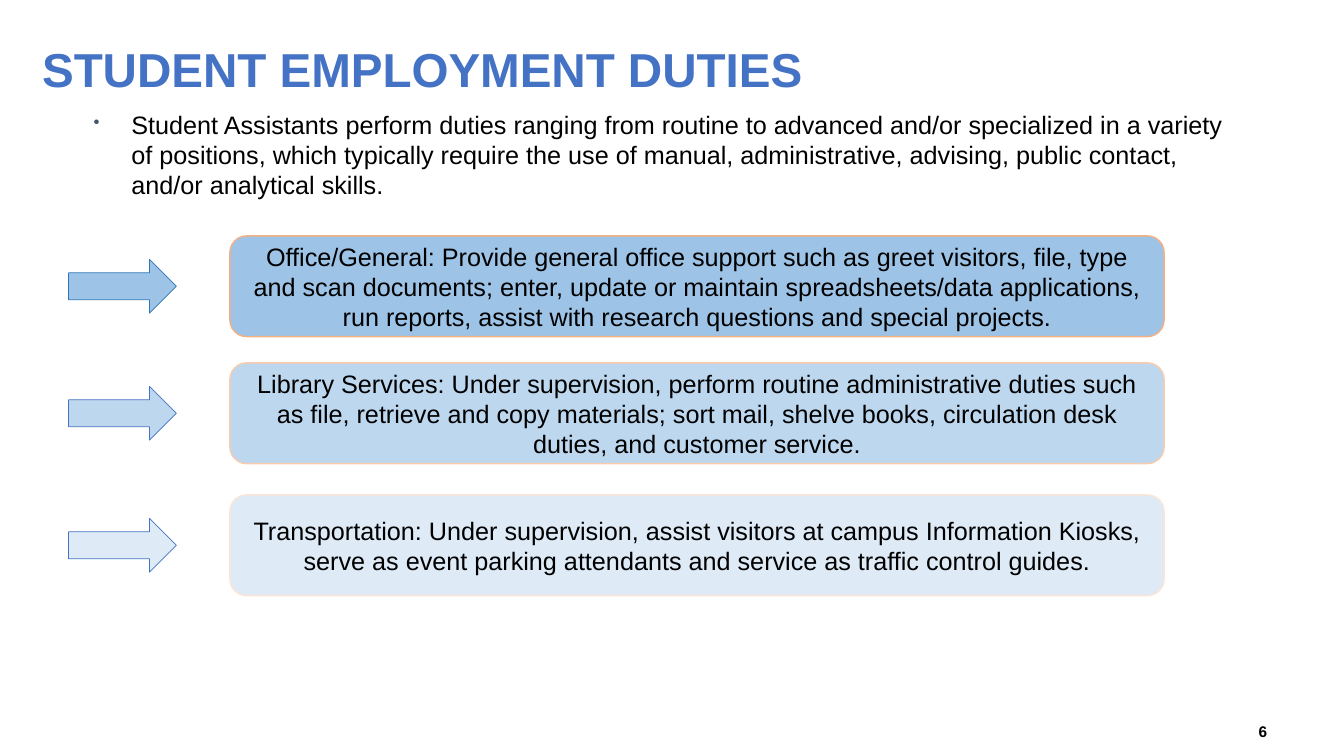
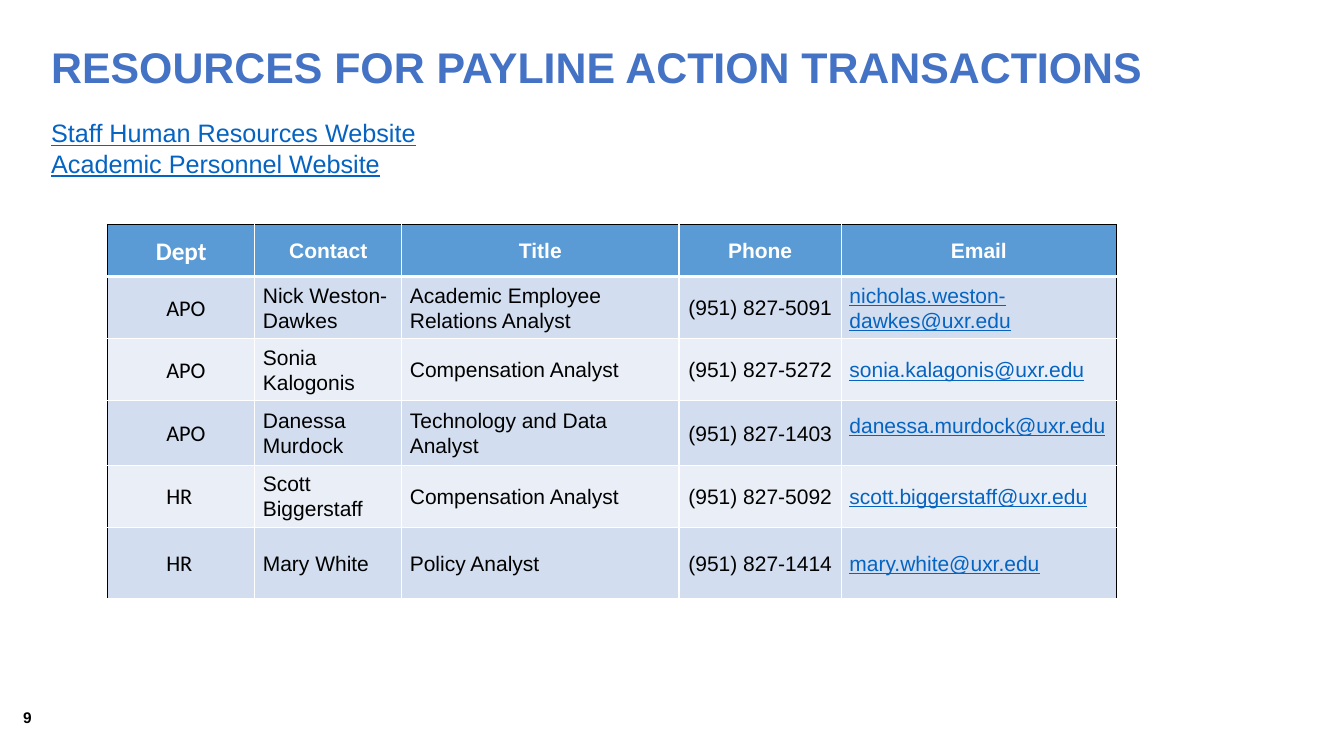
from lxml import etree
from pptx import Presentation
from pptx.dml.color import RGBColor
from pptx.enum.shapes import MSO_SHAPE
from pptx.enum.text import MSO_ANCHOR, PP_ALIGN
from pptx.oxml.ns import qn
from pptx.util import Pt

ARROW, ROUND = MSO_SHAPE.RIGHT_ARROW, MSO_SHAPE.ROUNDED_RECTANGLE
TOP, MID = MSO_ANCHOR.TOP, MSO_ANCHOR.MIDDLE
LEFT, CENTER, RIGHT = PP_ALIGN.LEFT, PP_ALIGN.CENTER, PP_ALIGN.RIGHT

COLORS = {
    "title": "4472C4", "ink": "000000", "white": "FFFFFF", "link": "0563C1",
    "bullet": "44546A", "head": "5B9BD5", "odd": "D2DEEF", "even": "EAEFF7",
    "deep": "9DC3E6", "soft": "BDD7EE", "pale": "DEEBF7", "navy": "2E75B6",
    "rust": "F4B183", "peach": "F8CBAD", "cream": "FBE5D6",
}


def color(name):
    return RGBColor.from_string(COLORS[name])


def write(frame, text, size=18, ink="ink", font="Arial", bold=False, under=False,
          align=LEFT, anchor=TOP, space=None, before=None, indent=0):
    """Fill a text frame, with one paragraph for each line of text."""
    frame.word_wrap = True
    frame.vertical_anchor = anchor
    frame.text = text
    for para in frame.paragraphs:
        para.alignment = align
        if space:
            para.line_spacing = space
        if before:
            para.space_before = Pt(before)
        if indent:
            para._p.get_or_add_pPr().set("marL", str(Pt(indent)))
        for run in para.runs:
            face = run.font
            face.name, face.size = font, Pt(size)
            face.bold, face.underline = bold, under
            face.color.rgb = color(ink)


def dot(para, ink, hang, scale):
    """Give a paragraph a hanging bullet, scaled in percent of the text."""
    props = para._p.get_or_add_pPr()
    props.set("marL", str(Pt(hang)))
    props.set("indent", str(-Pt(hang)))
    tint = etree.SubElement(props, qn("a:buClr"))
    etree.SubElement(tint, qn("a:srgbClr"), val=COLORS[ink])
    etree.SubElement(props, qn("a:buSzPct"), val=str(scale * 1000))
    etree.SubElement(props, qn("a:buChar"), char="•")


def edge(cell, side, ink, width=1):
    """Draw one border of a cell; side is L, R, T or B."""
    line = etree.SubElement(cell._tc.get_or_add_tcPr(), qn("a:ln" + side),
                            w=str(Pt(width)))
    fill = etree.SubElement(line, qn("a:solidFill"))
    etree.SubElement(fill, qn("a:srgbClr"), val=COLORS[ink])


class Deck:
    def __init__(self):
        self.file = Presentation()
        self.file.slide_width, self.file.slide_height = Pt(960), Pt(540)

    def start(self):
        self.slide = self.file.slides.add_slide(self.file.slide_layouts[6])

    def text(self, box, text, **style):
        frame = self.slide.shapes.add_textbox(*map(Pt, box)).text_frame
        write(frame, text, **style)
        return frame

    def title(self, box, text, size):
        self.text(box, text, size=size, ink="title", bold=True, anchor=MID, space=0.9)

    def number(self, left, top, text, align):
        self.text((left, top, 224, 24), text, size=11, bold=True,
                  align=align, anchor=MID)

    def shape(self, kind, box, fill, line, width, text=""):
        shape = self.slide.shapes.add_shape(kind, *map(Pt, box))
        shape.shadow.inherit = False
        shape.fill.solid()
        shape.fill.fore_color.rgb = color(fill)
        shape.line.color.rgb = color(line)
        shape.line.width = Pt(width)
        if text:
            write(shape.text_frame, text, align=CENTER, anchor=MID)

    def table(self, left, top, cols, rows, data, styles):
        """Add a table with a header row and one text style for each column."""
        table = self.slide.shapes.add_table(
            len(rows), len(cols), Pt(left), Pt(top),
            Pt(sum(cols)), Pt(sum(rows))).table
        table.first_row = table.horz_banding = False
        for col, width in zip(table.columns, cols):
            col.width = Pt(width)
        for row, high in zip(table.rows, rows):
            row.height = Pt(high)
        last = len(cols) - 1
        for r, line in enumerate(data):
            for c, text in enumerate(line):
                cell = table.cell(r, c)
                edge(cell, "L", "white" if c else "ink")
                edge(cell, "R", "ink" if c == last else "white")
                edge(cell, "T", "white" if r else "ink")
                edge(cell, "B", "white", 1 if r else 3)
                self.cell(cell, r, text, styles[c])
        return table

    def cell(self, cell, row, text, style):
        cell.margin_left = cell.margin_right = Pt(5.8)
        cell.margin_top = cell.margin_bottom = Pt(2.9)
        cell.fill.solid()
        if row:
            fill = "odd" if row % 2 else "even"
        else:
            fill = "head"
            style = {"font": style.get("font", "Arial"), "ink": "white", "bold": True,
                     "size": style.get("head", 15), "align": CENTER}
        cell.fill.fore_color.rgb = color(fill)
        look = {"size": 15, **style}
        look.pop("head", None)
        write(cell.text_frame, text, space=1.07, **look)
        cell.vertical_anchor = MID


DUTIES = [
    (168.5, "deep", "rust", "navy",
     "Office/General: Provide general office support such as greet visitors, file, "
     "type and scan documents; enter, update or maintain spreadsheets/data "
     "applications, run reports, assist with research questions and special projects."),
    (259.2, "soft", "peach", "title",
     "Library Services: Under supervision, perform routine administrative duties "
     "such as file, retrieve and copy materials; sort mail, shelve books, "
     "circulation desk duties, and customer service."),
    (353.5, "pale", "cream", "title",
     "Transportation: Under supervision, assist visitors at campus Information "
     "Kiosks, serve as event parking attendants and service as traffic control guides."),
]

STAFF = [
    ("Dept", "Contact", "Title", "Phone", "Email"),
    ("APO", "Nick Weston- Dawkes", "Academic Employee Relations Analyst",
     "(951) 827-5091", "nicholas.weston-dawkes@uxr.edu"),
    ("APO", "Sonia Kalogonis", "Compensation Analyst",
     "(951) 827-5272", "sonia.kalagonis@uxr.edu"),
    ("APO", "Danessa Murdock", "Technology and Data Analyst",
     "(951) 827-1403", "danessa.murdock@uxr.edu"),
    ("HR", "Scott Biggerstaff", "Compensation Analyst",
     "(951) 827-5092", "scott.biggerstaff@uxr.edu"),
    ("HR", "Mary White", "Policy Analyst",
     "(951) 827-1414", "mary.white@uxr.edu"),
]


def duties(deck):
    deck.start()
    deck.title((23, 19.4, 930, 64.8), "STUDENT EMPLOYMENT DUTIES", 34)
    intro = deck.text(
        (59.8, 74.2, 828, 102),
        "Student Assistants perform duties ranging from routine to advanced and/or "
        "specialized in a variety of positions, which typically require the use of "
        "manual, administrative, advising, public contact, and/or analytical skills.",
        before=12)
    dot(intro.paragraphs[0], "bullet", 27, 70)
    high, tall = 72, 38.4
    for top, fill, rim, line, text in DUTIES:
        deck.shape(ARROW, (49, top + (high - tall) / 2, 77, tall), fill, line, 0.5)
        deck.shape(ROUND, (164.2, top, 667.4, high), fill, rim, 1, text)
    deck.number(688.3, 510.5, "6", RIGHT)


def contacts(deck):
    deck.start()
    deck.title((29.5, 23, 888.5, 54), "RESOURCES FOR PAYLINE ACTION TRANSACTIONS", 30.6)
    deck.text((29.5, 80.6, 784, 160),
              "Staff Human Resources Website\nAcademic Personnel Website",
              ink="link", under=True)
    styles = [{"font": "Calibri", "size": 16, "head": 18, "indent": 36}, {}, {},
              {"align": CENTER}, {"ink": "link", "under": True}]
    table = deck.table(77, 160.4, (105, 105, 198, 116, 196.5),
                       (37, 44.6, 43.5, 46, 44.2, 51), STAFF, styles)
    table.cell(3, 4).margin_bottom = Pt(14.4)
    deck.number(9.4, 500.4, "9", LEFT)


def main():
    deck = Deck()
    duties(deck)
    contacts(deck)
    deck.file.save("out.pptx")


if __name__ == "__main__":
    main()
